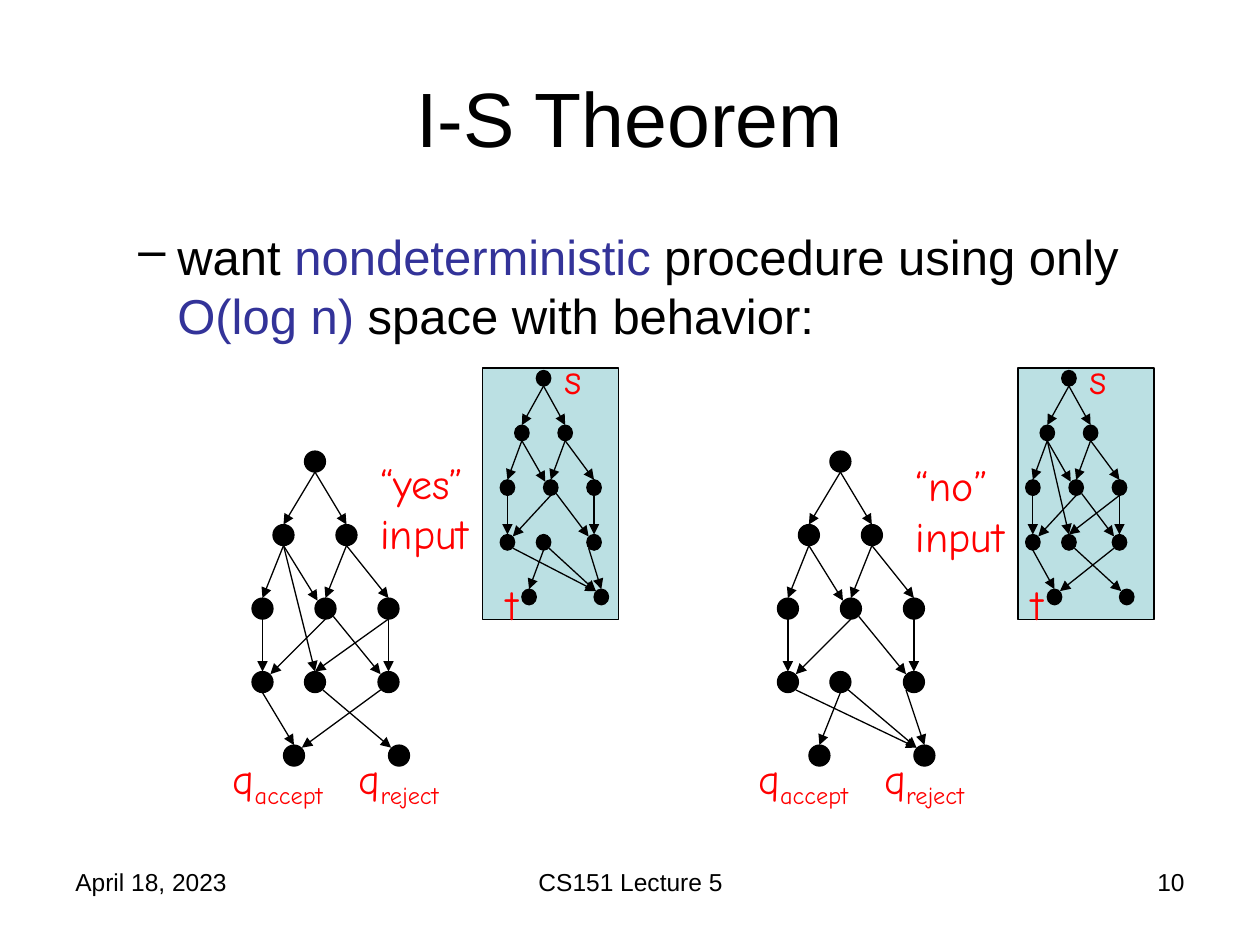
"""Build the I-S Theorem slide: configuration graphs paired with reachability instances."""
from dataclasses import dataclass

from lxml import etree
from pptx import Presentation
from pptx.dml.color import RGBColor
from pptx.enum.shapes import MSO_CONNECTOR, MSO_SHAPE
from pptx.enum.text import MSO_ANCHOR, PP_ALIGN
from pptx.oxml.ns import qn
from pptx.util import Inches, Pt

BLACK = RGBColor(0x00, 0x00, 0x00)
RED = RGBColor(0xFF, 0x00, 0x00)
INDIGO = RGBColor(0x33, 0x33, 0x99)
PANEL_BLUE = RGBColor(0xBB, 0xE0, 0xE3)
RECTANGLE, OVAL = MSO_SHAPE.RECTANGLE, MSO_SHAPE.OVAL
STRAIGHT = MSO_CONNECTOR.STRAIGHT
TOP, MIDDLE = MSO_ANCHOR.TOP, MSO_ANCHOR.MIDDLE
LEFT, CENTER, RIGHT = PP_ALIGN.LEFT, PP_ALIGN.CENTER, PP_ALIGN.RIGHT
SANS, HAND = "Arial", "Comic Neue"
OUTLINE = Pt(0.75)

NODES = {
    "s": (6, 1),
    "a": (3, 8), "b": (9, 8),
    "c": (1, 15), "d": (7, 15), "e": (13, 15),
    "f": (1, 22), "g": (6, 22), "h": (13, 22),
    "t": (4, 29), "r": (14, 29),
}
PORTS = {
    "N": (0, -1), "S": (0, 1),
    "NW": (-0.75, -0.75), "NE": (0.75, -0.75),
    "SW": (-0.75, 0.75), "SE": (0.75, 0.75),
}
SHARED_EDGES = (
    "s S a N", "s S b N", "a S c N", "b S d N", "b S e N", "c S f N",
    "e S h N", "a S d NW", "d S f NE", "d SE h NW", "g SE r NW",
)
REACHING_EDGES = SHARED_EDGES + ("e S g N", "f S t N", "h SW t NE", "a S g N")
MISSING_EDGES = SHARED_EDGES + ("h SW r N", "f SE r NW", "g S t N")


@dataclass(frozen=True)
class Run:
    """A stretch of text with its own colour or baseline shift."""
    text: str
    color: RGBColor | None = None
    baseline: int = 0


@dataclass(frozen=True)
class Graph:
    """Origin, unit size and edges of one layered graph."""
    left: float
    top: float
    unit_x: float
    unit_y: float
    edges: tuple[str, ...]

    def at(self, x: float, y: float) -> tuple[int, int]:
        """Convert graph units to a place on the slide."""
        return Inches(self.left + x * self.unit_x), Inches(self.top + y * self.unit_y)


@dataclass(frozen=True)
class Case:
    """One input case with its configuration graph and output instance."""
    answer: str
    answer_place: tuple[float, float]
    panel_left: float
    configurations: Graph
    instance: Graph


def configuration_graph(left: float, edges: tuple[str, ...]) -> Graph:
    """Return a large graph."""
    return Graph(left, 3.58, 1 / 12, 1 / 12, edges)


def instance_graph(left: float, edges: tuple[str, ...]) -> Graph:
    """Return a small graph."""
    return Graph(left, 2.94, 0.0573, 0.062, edges)


CASES = (
    Case("“yes” input", (2.92, 3.58), 3.83,
         configuration_graph(2, REACHING_EDGES), instance_graph(3.97, MISSING_EDGES)),
    Case("“no” input", (7.17, 3.6), 8.08,
         configuration_graph(6.17, MISSING_EDGES), instance_graph(8.14, REACHING_EDGES)),
)


def add_text(shapes, box: tuple[float, float, float, float], *runs: Run,
             size: float = 24, font: str = HAND, color: RGBColor = RED,
             align: PP_ALIGN = LEFT, anchor: MSO_ANCHOR = TOP, bullet: str = "") -> None:
    """Add a wrapped paragraph in a text box."""
    frame = shapes.add_textbox(*map(Inches, box)).text_frame
    frame.word_wrap = True
    frame.vertical_anchor = anchor
    paragraph = frame.paragraphs[0]
    paragraph.alignment = align
    if bullet:
        paragraph.level = 1
        properties = paragraph._p.get_or_add_pPr()
        properties.set("marL", str(Inches(0.81)))
        properties.set("indent", str(Inches(-0.31)))
        etree.SubElement(properties, qn("a:buChar")).set("char", bullet)
    for part in runs:
        run = paragraph.add_run()
        run.text = part.text
        run.font.size = Pt(size)
        run.font.name = font
        run.font.color.rgb = part.color or color
        if part.baseline:
            run._r.get_or_add_rPr().set("baseline", str(part.baseline * 1000))


def add_solid(shapes, kind: MSO_SHAPE, box: tuple[int, int, int, int], fill: RGBColor) -> None:
    """Add a filled shape with a thin black outline."""
    solid = shapes.add_shape(kind, *box)
    solid.shadow.inherit = False
    solid.fill.solid()
    solid.fill.fore_color.rgb = fill
    solid.line.color.rgb = BLACK
    solid.line.width = OUTLINE


def add_arrow(shapes, start: tuple[int, int], end: tuple[int, int]) -> None:
    """Add a straight arrow with a triangular head."""
    arrow = shapes.add_connector(STRAIGHT, *start, *end)
    arrow.line.color.rgb = BLACK
    arrow.line.width = OUTLINE
    etree.SubElement(arrow.line._get_or_add_ln(), qn("a:tailEnd")).set("type", "triangle")
    etree.SubElement(arrow._element.spPr, qn("a:effectLst"))


def port_place(graph: Graph, node: str, port: str) -> tuple[int, int]:
    """Find where an edge meets a node."""
    (x, y), (dx, dy) = NODES[node], PORTS[port]
    return graph.at(x + dx, y + dy)


def add_graph(shapes, graph: Graph) -> None:
    """Draw the nodes and edges of a graph."""
    diameters = Inches(2 * graph.unit_x), Inches(2 * graph.unit_y)
    for x, y in NODES.values():
        add_solid(shapes, OVAL, (*graph.at(x - 1, y - 1), *diameters), BLACK)
    for edge in graph.edges:
        source, exit_port, target, entry_port = edge.split()
        add_arrow(shapes, port_place(graph, source, exit_port),
                  port_place(graph, target, entry_port))


def add_case(shapes, case: Case) -> None:
    """Draw one input case."""
    panel = tuple(map(Inches, (case.panel_left, 2.92, 1.08, 2)))
    add_solid(shapes, RECTANGLE, panel, PANEL_BLUE)
    add_text(shapes, (*case.answer_place, 1, 0.9), Run(case.answer))
    add_graph(shapes, case.configurations)
    for state, offset in (("accept", -0.25), ("reject", 0.75)):
        add_text(shapes, (case.configurations.left + offset, 5.92, 1.08, 0.5),
                 Run("q"), Run(state, baseline=-25))
    instance_shapes = shapes.add_group_shape().shapes
    add_graph(instance_shapes, case.instance)
    for vertex, offset, top in (("t", -0.05, 4.54), ("s", 0.41, 2.75)):
        add_text(instance_shapes, (case.instance.left + offset, top, 0.29, 0.5), Run(vertex))


def main() -> None:
    """Build and save the slide."""
    deck = Presentation()
    deck.slide_width, deck.slide_height = Inches(10), Inches(7.5)
    shapes = deck.slides.add_slide(deck.slide_layouts[6]).shapes
    add_text(shapes, (0.5, 0.3, 9, 1.25), Run("I-S Theorem"), size=44, font=SANS,
             color=BLACK, align=CENTER, anchor=MIDDLE)
    add_text(shapes, (0.5, 1.75, 9, 4.95), Run("want "), Run("nondeterministic", INDIGO),
             Run(" procedure using only "), Run("O(log n)", INDIGO),
             Run(" space with behavior:"), size=28, font=SANS, color=BLACK, bullet="–")
    for case in CASES:
        add_case(shapes, case)
    for text, left, width, align in (("April 18, 2023", 0.5, 2.33, LEFT),
                                     ("CS151 Lecture 5", 3.42, 3.17, CENTER),
                                     ("10", 7.17, 2.33, RIGHT)):
        add_text(shapes, (left, 6.83, width, 0.52), Run(text), size=14, font=SANS,
                 color=BLACK, align=align)
    deck.save("out.pptx")


if __name__ == "__main__":
    main()
